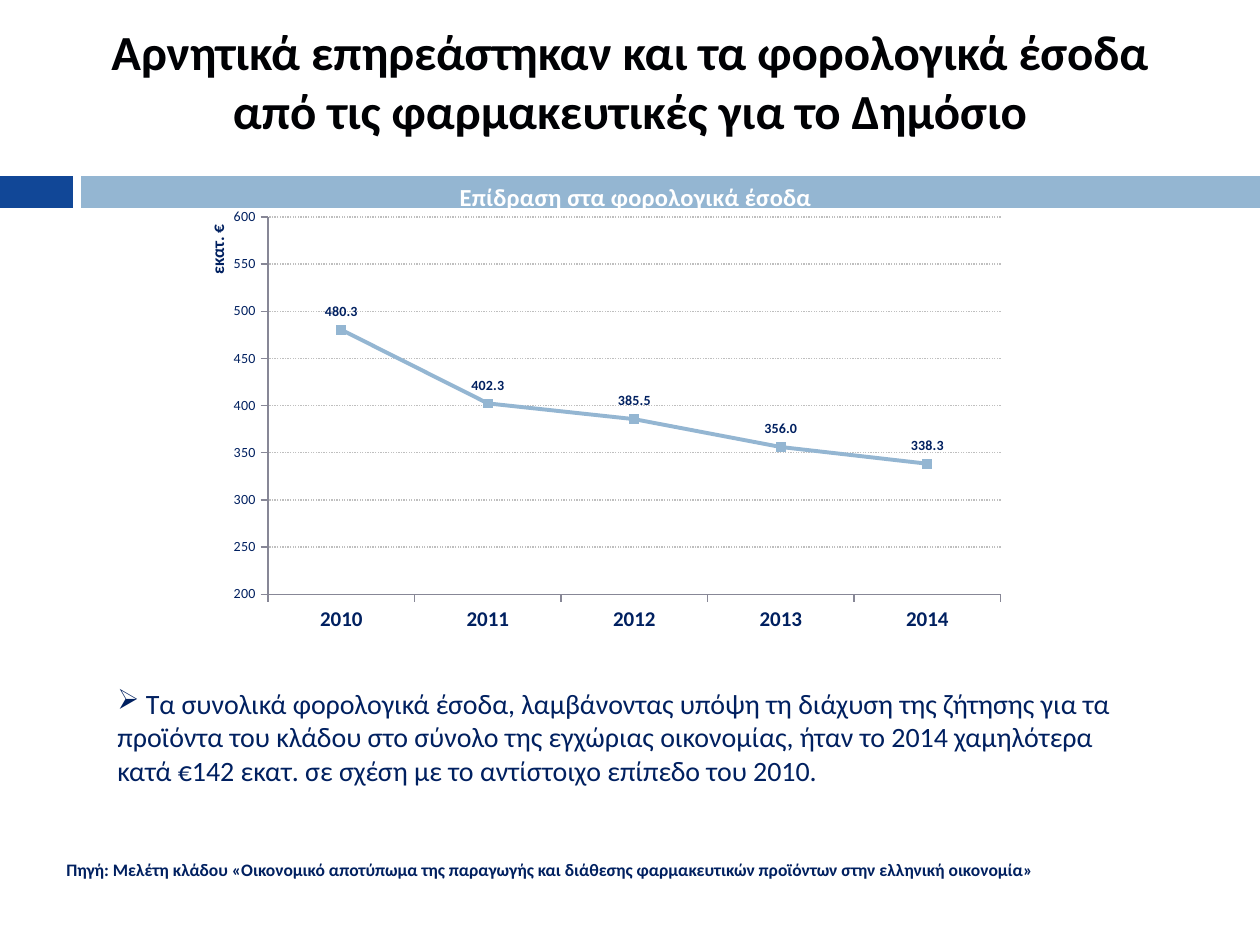
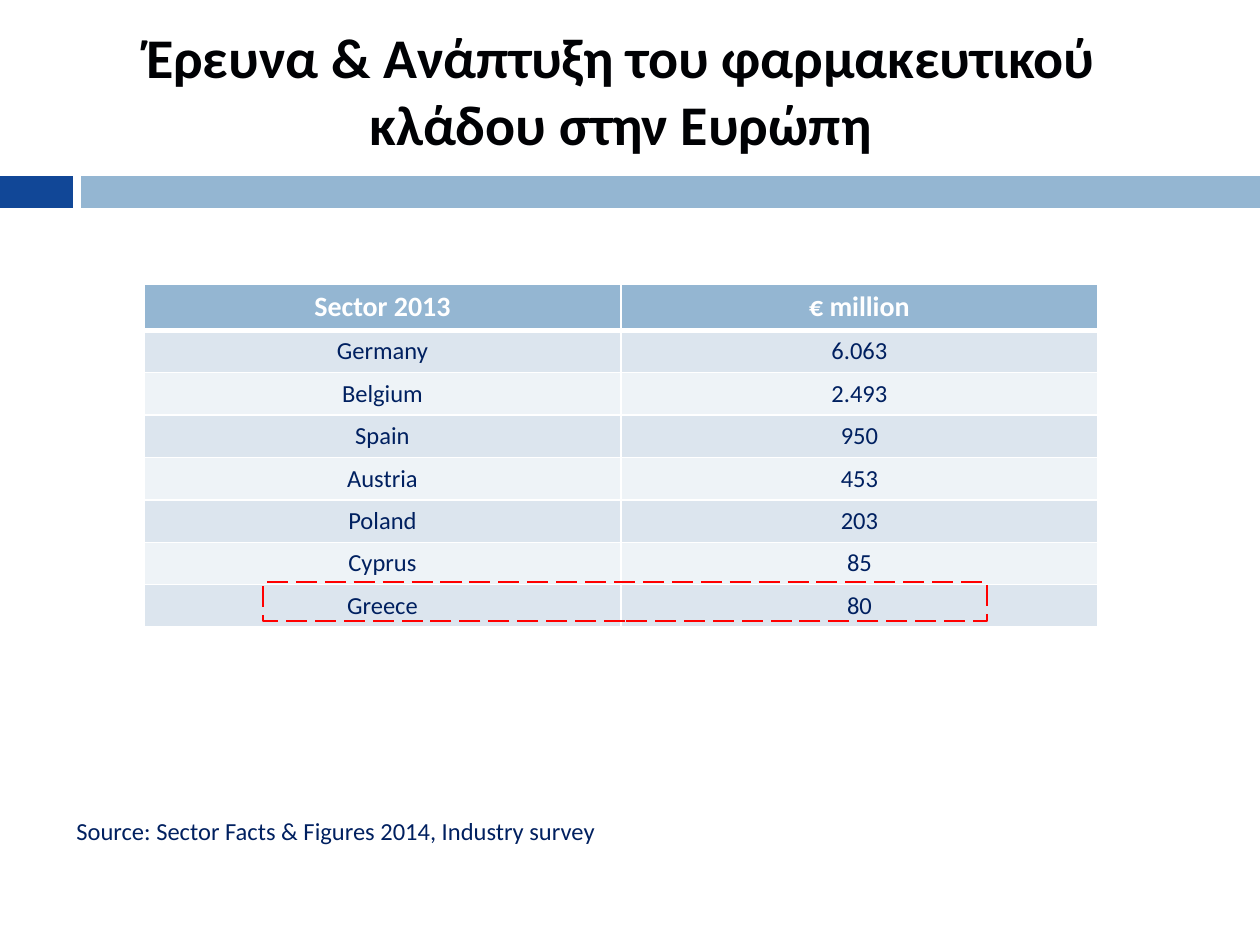
from dataclasses import dataclass

from lxml.etree import SubElement
from pptx import Presentation
from pptx.chart.data import CategoryChartData
from pptx.dml.color import RGBColor
from pptx.enum.chart import XL_CHART_TYPE as ChartType
from pptx.enum.chart import XL_LABEL_POSITION as LabelPosition
from pptx.enum.chart import XL_MARKER_STYLE as MarkerStyle
from pptx.enum.chart import XL_TICK_MARK as TickMark
from pptx.enum.dml import MSO_LINE as LineDash
from pptx.enum.shapes import MSO_SHAPE as ShapeKind
from pptx.enum.text import MSO_ANCHOR as Anchor
from pptx.enum.text import PP_ALIGN as Align
from pptx.oxml.ns import qn
from pptx.util import Emu, Pt

# Content
TAX_SLIDE = {
    "title": "Αρνητικά επηρεάστηκαν και τα φορολογικά έσοδα από τις φαρμακευτικές για το Δημόσιο",
    "chart_title": "Επίδραση στα φορολογικά έσοδα",
    "unit": "εκατ. €",
    "revenue": {"2010": 480.3, "2011": 402.3, "2012": 385.5, "2013": 356.0, "2014": 338.3},
    "bullet": "➢",
    "finding": " Τα συνολικά φορολογικά έσοδα, λαμβάνοντας υπόψη τη διάχυση της ζήτησης για τα "
               "προϊόντα του κλάδου στο σύνολο της εγχώριας οικονομίας, ήταν το 2014 χαμηλότερα "
               "κατά €142 εκατ. σε σχέση με το αντίστοιχο επίπεδο του 2010.",
    "source": "Πηγή: Μελέτη κλάδου «Οικονομικό αποτύπωμα της παραγωγής και διάθεσης "
              "φαρμακευτικών προϊόντων στην ελληνική οικονομία»",
}
RESEARCH_SLIDE = {
    "title": "Έρευνα & Ανάπτυξη του φαρμακευτικού κλάδου στην Ευρώπη",
    "rows": [
        ("Sector 2013", "€ million"),
        ("Germany", "6.063"),
        ("Belgium", "2.493"),
        ("Spain", "950"),
        ("Austria", "453"),
        ("Poland", "203"),
        ("Cyprus", "85"),
        ("Greece", "80"),
    ],
    "source": "Source: Sector Facts & Figures 2014, Industry survey",
}


# Look
@dataclass(frozen=True)
class Theme:
    font: str = "Calibri"
    title: str = "000104"
    text: str = "002060"
    white: str = "FFFFFF"
    dark_band: str = "114797"
    accent: str = "94B6D2"
    odd_row: str = "DCE5EE"
    even_row: str = "EEF3F7"
    grid: str = "BFBFBF"
    axis: str = "878796"
    highlight: str = "FF0000"
    large_title: int = 32
    small_title: int = 28
    body: int = 16
    medium: int = 14
    category: int = 12
    small: int = 10
    tiny: int = 8


THEME = Theme()
EMU_PER_PX = 914400 / 126
SLIDE_SIZE = (1260, 945)
BANDS = [((0, 176, 73, 32), THEME.dark_band), ((81, 176, 1179, 32), THEME.accent)]


def px(length):
    return Emu(round(length * EMU_PER_PX))


def place(box):
    return [px(length) for length in box]


def color(value):
    return RGBColor.from_string(value)


def style_font(font, size, value=THEME.text, bold=False):
    font.name = THEME.font
    font.size = Pt(size)
    font.bold = bold
    font.color.rgb = color(value)


def style_line(line, value, width, dash=None):
    line.color.rgb = color(value)
    line.width = Pt(width)
    if dash:
        line.dash_style = dash


def write(text_frame, text, size, value=THEME.text, bold=False, align=Align.LEFT):
    text_frame.text = text
    paragraph = text_frame.paragraphs[0]
    paragraph.alignment = align
    style_font(paragraph.runs[0].font, size, value, bold)
    return paragraph


def add_text(slide, box, text, size, value=THEME.text, bold=False,
             align=Align.LEFT, anchor=Anchor.TOP):
    text_frame = slide.shapes.add_textbox(*place(box)).text_frame
    text_frame.word_wrap = True
    text_frame.vertical_anchor = anchor
    return write(text_frame, text, size, value, bold, align)


def add_rectangle(slide, box):
    shape = slide.shapes.add_shape(ShapeKind.RECTANGLE, *place(box))
    shape.shadow.inherit = False
    return shape


def add_base_slide(presentation, title, box, size):
    slide = presentation.slides.add_slide(presentation.slide_layouts[6])
    for band_box, fill in BANDS:
        band = add_rectangle(slide, band_box)
        band.fill.solid()
        band.fill.fore_color.rgb = color(fill)
        band.line.fill.background()
    add_text(slide, box, title, size, THEME.title, True, Align.CENTER, Anchor.MIDDLE)
    return slide


# Chart parts
def set_layout(parent, index, **values):
    """Give a chart part a fixed place, in fractions of the chart area."""
    for old in parent.findall(qn("c:layout")):
        parent.remove(old)
    layout = parent.makeelement(qn("c:layout"))
    parent.insert(index, layout)
    manual = SubElement(layout, qn("c:manualLayout"))
    for name, value in values.items():
        SubElement(manual, qn(f"c:{name}")).set("val", str(value))


def style_axis(axis, size, bold=False):
    axis.major_tick_mark = TickMark.OUTSIDE
    axis.minor_tick_mark = TickMark.NONE
    style_font(axis.tick_labels.font, size, bold=bold)
    style_line(axis.format.line, THEME.axis, 0.75)


def add_revenue_chart(slide, box, content):
    data = CategoryChartData(number_format="0.0")
    data.categories = list(content["revenue"])
    data.add_series("Series 1", list(content["revenue"].values()))
    chart = slide.shapes.add_chart(ChartType.LINE_MARKERS, *place(box), data).chart
    chart.has_legend = False
    style_font(chart.font, THEME.small)

    # Title and plot area
    chart.has_title = True
    write(chart.chart_title.text_frame, content["chart_title"], THEME.medium,
          THEME.white, True, Align.CENTER)
    chart.chart_title.include_in_layout = False
    title = chart._chartSpace.chart.find(qn("c:title"))
    set_layout(title, 1, xMode="edge", yMode="edge", x=0.31, y=0)
    set_layout(chart._chartSpace.chart.plotArea, 0, layoutTarget="inner", xMode="edge",
               yMode="edge", x=0.08, y=0.09, w=0.9, h=0.81)

    # Axes
    style_axis(chart.category_axis, THEME.category, True)
    axis = chart.value_axis
    style_axis(axis, THEME.tiny)
    axis.minimum_scale, axis.maximum_scale, axis.major_unit = 200, 600, 50
    axis.tick_labels.number_format = "0"
    axis.tick_labels.number_format_is_linked = False
    style_line(axis.major_gridlines.format.line, THEME.grid, 0.75, LineDash.ROUND_DOT)
    axis.has_title = True
    write(axis.axis_title.text_frame, content["unit"], THEME.small, bold=True)
    unit = axis._element.find(qn("c:title"))
    body = unit.find(".//" + qn("a:bodyPr"))
    body.set("rot", "-5400000")
    body.set("vert", "horz")
    set_layout(unit, 1, xMode="edge", yMode="edge", x=0, y=0.1)

    # Series
    plot = chart.plots[0]
    plot.vary_by_categories = False
    series = plot.series[0]
    series.smooth = False
    style_line(series.format.line, THEME.accent, 2.25)
    series.marker.style = MarkerStyle.SQUARE
    series.marker.size = 5
    series.marker.format.fill.solid()
    series.marker.format.fill.fore_color.rgb = color(THEME.accent)
    style_line(series.marker.format.line, THEME.accent, 0.75)
    labels = series.data_labels
    labels.show_value = True
    labels.position = LabelPosition.ABOVE
    labels.number_format = "0.0"
    labels.number_format_is_linked = False
    style_font(labels.font, THEME.tiny, bold=True)


# Table parts
def set_borders(cell, widths):
    properties = cell._tc.get_or_add_tcPr()
    for index, (side, width) in enumerate(widths.items()):
        line = properties.makeelement(qn(f"a:ln{side}"), {"w": str(Pt(width))})
        properties.insert(index, line)
        fill = SubElement(line, qn("a:solidFill"))
        SubElement(fill, qn("a:srgbClr")).set("val", THEME.white)


def add_spending_table(slide, box, rows, header_height):
    columns = len(rows[0])
    row_height = (box[3] - header_height) / (len(rows) - 1)
    table = slide.shapes.add_table(len(rows), columns, *place(box)).table
    for column in table.columns:
        column.width = px(box[2] / columns)
    for row_index, row in enumerate(rows):
        header = row_index == 0
        table.rows[row_index].height = px(header_height if header else row_height)
        fill = THEME.accent if header else (THEME.even_row, THEME.odd_row)[row_index % 2]
        widths = {"L": 1, "R": 1, "T": 3 if row_index == 1 else 1, "B": 3 if header else 1}
        for column_index, text in enumerate(row):
            cell = table.cell(row_index, column_index)
            cell.vertical_anchor = Anchor.MIDDLE
            cell.fill.solid()
            cell.fill.fore_color.rgb = color(fill)
            write(cell.text_frame, text, THEME.body if header else THEME.medium,
                  THEME.white if header else THEME.text, header, Align.CENTER)
            set_borders(cell, widths)


# Slides
def build_tax_slide(presentation):
    content = TAX_SLIDE
    slide = add_base_slide(presentation, content["title"], (63, 16, 1134, 129),
                           THEME.small_title)
    finding = add_text(slide, (105, 680, 1052, 115), content["finding"], THEME.body)
    bullet = SubElement(finding._p.get_or_add_pPr(), qn("a:buChar"))
    bullet.set("char", content["bullet"])
    add_revenue_chart(slide, (203, 175, 814, 466), content)
    add_text(slide, (54, 853, 1022, 34), content["source"], THEME.small, bold=True)


def build_research_slide(presentation):
    content = RESEARCH_SLIDE
    slide = add_base_slide(presentation, content["title"], (54, 16, 1134, 147),
                           THEME.large_title)
    add_spending_table(slide, (144, 284, 954, 342), content["rows"], 45)
    add_text(slide, (64, 810, 922, 43), content["source"], THEME.medium)
    highlight = add_rectangle(slide, (263, 582, 724, 39))
    highlight.fill.background()
    style_line(highlight.line, THEME.highlight, 1.5, LineDash.LONG_DASH)


def main():
    presentation = Presentation()
    presentation.slide_width, presentation.slide_height = place(SLIDE_SIZE)
    build_tax_slide(presentation)
    build_research_slide(presentation)
    presentation.save("out.pptx")


if __name__ == "__main__":
    main()
